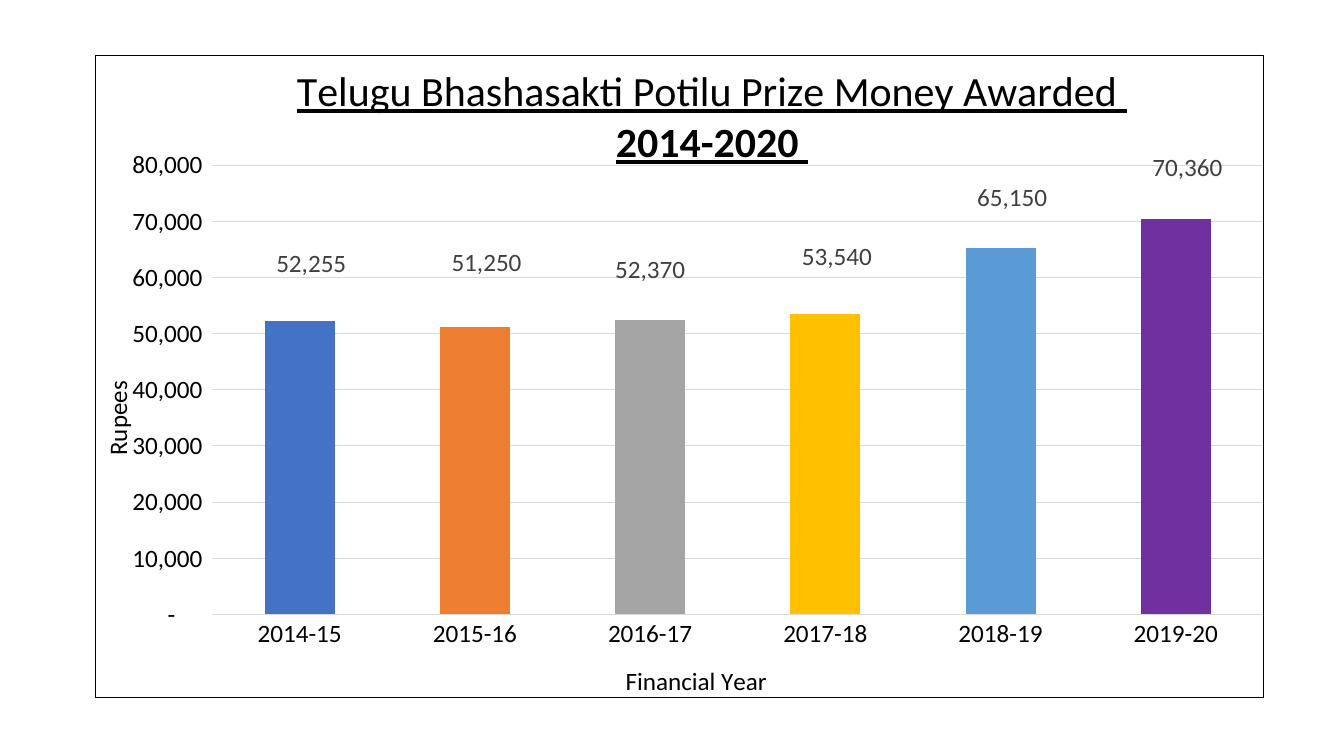
from dataclasses import dataclass

from lxml.etree import SubElement
from pptx import Presentation
from pptx.chart.axis import _BaseAxis as Axis
from pptx.chart.data import CategoryChartData
from pptx.chart.series import BarSeries
from pptx.dml.color import RGBColor
from pptx.enum.chart import XL_CHART_TYPE, XL_LABEL_POSITION, XL_TICK_MARK
from pptx.oxml import parse_xml
from pptx.oxml.ns import nsdecls, qn
from pptx.text.text import Font
from pptx.util import Pt

FACE = "Calibri"
MONEY = '_ * #,##0_ ;_ * \\-#,##0_ ;_ * "-"??_ ;_ '


@dataclass
class Prize:
    """One year's prize money, its colour and its label's shift."""
    year: str
    sum: int
    hue: str
    dx: float
    dy: float


PRIZES = [
    Prize("2014-15", 52255, "4472C4", 0.01, -0.06),
    Prize("2015-16", 51250, "ED7D31", 0.01, -0.07),
    Prize("2016-17", 52370, "A5A5A5", 0, -0.05),
    Prize("2017-18", 53540, "FFC000", 0.01, -0.06),
    Prize("2018-19", 65150, "5B9BD5", 0.01, -0.05),
    Prize("2019-20", 70360, "7030A0", 0.01, -0.05),
]


def tint(hue: str) -> RGBColor:
    return RGBColor.from_string(hue)


def style(font: Font, size: float, hue: str = "000000") -> None:
    font.name = FACE
    font.size = Pt(size)
    font.bold = False
    font.color.rgb = tint(hue)


def place(owner, spot: int, **sides) -> None:
    """Give a chart part a manual layout, in fractions of the chart."""
    for old in owner.findall(qn("c:layout")):
        owner.remove(old)
    layout = parse_xml(f"<c:layout {nsdecls('c')}><c:manualLayout/></c:layout>")
    for key, value in sides.items():
        SubElement(layout[0], qn(f"c:{key}")).set("val", str(value))
    owner.insert(spot, layout)


def head(part, text: str, size: float, x: float, y: float) -> None:
    """Write and place the title of the chart or of an axis."""
    title = part.chart_title if hasattr(part, "chart_title") else part.axis_title
    title.text_frame.text = text
    for para in title.text_frame.paragraphs:
        for run in para.runs:
            style(run.font, size)
    place(title._element, 1, xMode="edge", yMode="edge", x=x, y=y)


def set_axis(axis: Axis, text: str, x: float, y: float) -> None:
    head(axis, text, 18, x, y)
    axis.major_tick_mark = axis.minor_tick_mark = XL_TICK_MARK.NONE
    axis.format.line.fill.background()
    style(axis.tick_labels.font, 18)


def paint(series: BarSeries, prizes: list[Prize]) -> None:
    """Colour each bar and shift its label."""
    for i, prize in enumerate(prizes):
        point = series.points[i]
        point.format.fill.solid()
        point.format.fill.fore_color.rgb = tint(prize.hue)
        label = point.data_label
        style(label.font, 18, "404040")
        label.position = XL_LABEL_POSITION.OUTSIDE_END
        place(label._get_or_add_dLbl(), 1, x=prize.dx, y=prize.dy)


def main() -> None:
    deck = Presentation()
    deck.slide_width, deck.slide_height = Pt(960), Pt(540)
    slide = deck.slides.add_slide(deck.slide_layouts[6])

    # Chart and its frame
    data = CategoryChartData(number_format=MONEY)
    data.categories = [prize.year for prize in PRIZES]
    data.add_series("Series 1", [prize.sum for prize in PRIZES])
    chart = slide.shapes.add_chart(
        XL_CHART_TYPE.COLUMN_CLUSTERED,
        Pt(67.68), Pt(39.6), Pt(835.2), Pt(463.68), data).chart
    style(chart.font, 10)
    chart.has_legend = False
    space = chart._chartSpace
    space.find(qn("c:chart")).addnext(parse_xml(
        f'<c:spPr {nsdecls("c", "a")}><a:ln w="{Pt(0.75)}"><a:solidFill>'
        '<a:srgbClr val="000000"/></a:solidFill></a:ln></c:spPr>'))
    area = space.find(f".//{qn('c:plotArea')}")
    place(area, 0, layoutTarget="inner", xMode="edge", yMode="edge",
          x=0.1, y=0.17, w=0.9, h=0.7)

    # Title
    head(chart, "Telugu Bhashasakti Potilu Prize Money Awarded \n2014-2020 ",
         30, 0.17, 0.01)
    lines = chart.chart_title.text_frame.paragraphs
    for line in lines:
        line.runs[0].font.underline = True
    lines[1].runs[0].font.bold = True

    # Axes
    set_axis(chart.category_axis, "Financial Year", 0.45, 0.94)
    scale = chart.value_axis
    set_axis(scale, "Rupees", 0, 0.5)
    scale.minimum_scale, scale.maximum_scale = 0, 80000
    scale.major_unit = 10000
    scale.tick_labels.number_format = MONEY
    scale.tick_labels.number_format_is_linked = False
    grid = scale.major_gridlines.format.line
    grid.color.rgb = tint("D9D9D9")
    grid.width = Pt(0.75)

    # Bars and labels, without leader lines
    plot = chart.plots[0]
    plot.gap_width = 150
    plot.vary_by_categories = False
    series = plot.series[0]
    labels = series.data_labels
    labels.show_value = True
    labels.number_format = MONEY
    labels.number_format_is_linked = False
    style(labels.font, 18, "404040")
    paint(series, PRIZES)
    for lead in space.iter(qn("c:showLeaderLines")):
        lead.set("val", "0")

    deck.save("out.pptx")


if __name__ == "__main__":
    main()
